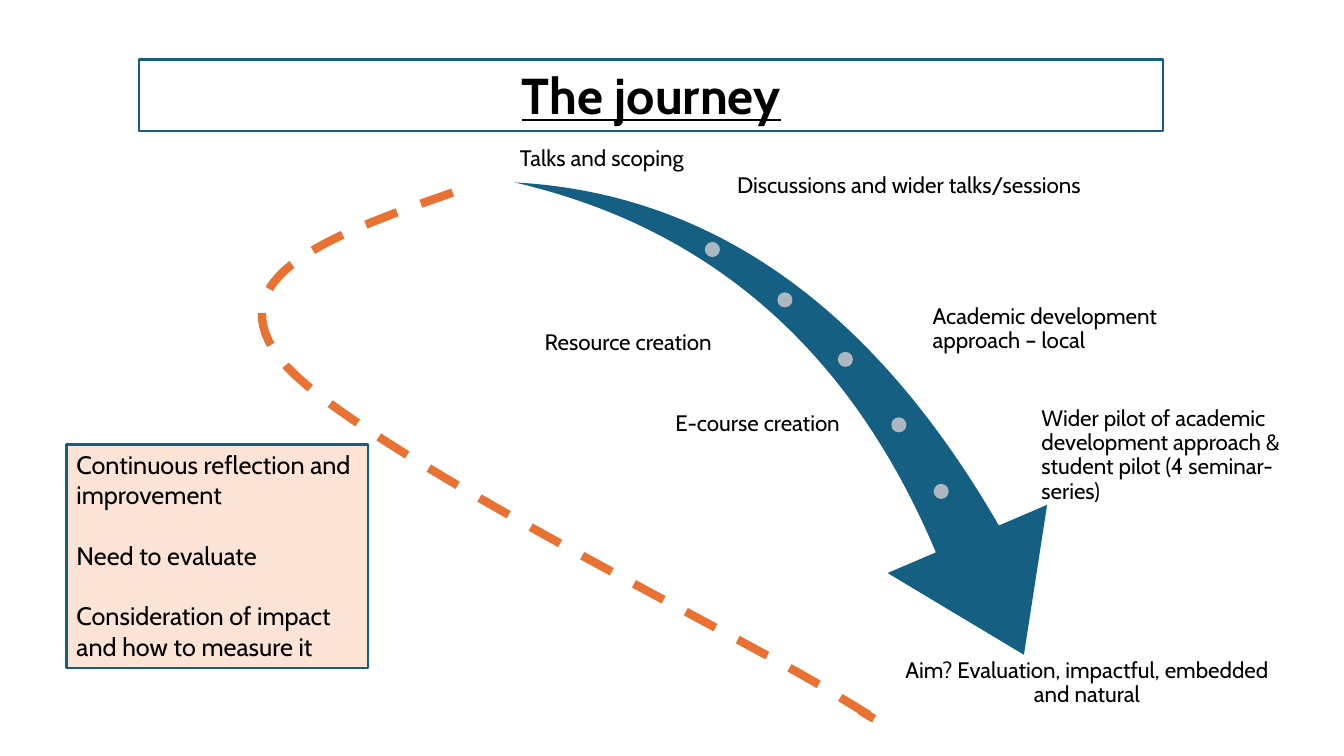
from pptx import Presentation
from pptx.dml.color import RGBColor
from pptx.enum.dml import MSO_LINE
from pptx.enum.shapes import MSO_SHAPE as Shape
from pptx.enum.text import MSO_ANCHOR as Anchor, MSO_AUTO_SIZE as AutoSize, PP_ALIGN as Align
from pptx.util import Inches, Pt

COLORS = {"blue": "156082", "dot": "ACB7C1", "orange": "E97132",
          "peach": "FBE3D6", "white": "FFFFFF", "black": "000000"}
FONT = "Cabin"

TITLE = "The journey"
REFLECTIONS = ["Continuous reflection and improvement",
               "Need to evaluate",
               "Consideration of impact and how to measure it"]
STEPS = [
    ("Talks and scoping", (4.57, 0.62, 2.8, 1.1), Align.CENTER, Anchor.BOTTOM),
    ("Discussions and wider talks/sessions", (7.29, 1.3, 4.24, 1.1), Align.LEFT, Anchor.MIDDLE),
    ("Resource creation", (4.58, 2.86, 2.5, 1.1), Align.RIGHT, Anchor.MIDDLE),
    ("Academic development approach – local", (9.23, 2.72, 2.95, 1.1), Align.LEFT, Anchor.MIDDLE),
    ("E-course creation", (4.57, 3.66, 3.78, 1.1), Align.RIGHT, Anchor.MIDDLE),
    ("Wider pilot of academic development approach & student pilot (4 seminar-series)",
     (10.31, 3.93, 2.44, 1.18), Align.LEFT, Anchor.MIDDLE),
    ("Aim? Evaluation, impactful, embedded and natural",
     (8.89, 6.52, 3.78, 0.63), Align.CENTER, Anchor.TOP),
]
MILESTONES = [(6.99, 2.4), (7.71, 2.9), (8.31, 3.49), (8.84, 4.14), (9.26, 4.8)]
MILESTONE_SIZE = 0.15
LOOP_START = (4.49, 1.91)
LOOP_CURVES = [
    ((3.32, 2.32), (2.15, 2.73), (2.77, 3.55)),
    ((3.38, 4.36), (7.21, 6.24), (8.17, 6.82)),
    ((9.14, 7.41), (8.47, 7), (8.55, 7.06)),
    ((8.63, 7.11), (8.65, 7.12), (8.67, 7.13)),
]
CURVE_STEPS = 30


def color(name):
    return RGBColor.from_string(COLORS[name])


def add_filled(slide, kind, place, fill, outline=None):
    shape = slide.shapes.add_shape(kind, *map(Inches, place))
    shape.shadow.inherit = False
    shape.fill.solid()
    shape.fill.fore_color.rgb = color(fill)
    if outline:
        shape.line.color.rgb = color(outline)
        shape.line.width = Pt(1.5)
    else:
        shape.line.fill.background()
    return shape


def write(shape, lines, size, align, anchor, gap=0, bold=None, underline=None):
    frame = shape.text_frame
    frame.word_wrap = True
    frame.vertical_anchor = anchor
    frame.text = "\n".join(lines)
    for index, paragraph in enumerate(frame.paragraphs):
        paragraph.alignment = align
        if index:
            paragraph.space_before = Pt(gap)
        font = paragraph.runs[0].font
        font.name, font.size = FONT, Pt(size)
        font.bold, font.underline = bold, underline
        font.color.rgb = color("black")
    return frame


def add_step(slide, text, place, align, anchor):
    box = slide.shapes.add_textbox(*map(Inches, place))
    frame = write(box, [text], 16, align, anchor)
    frame.margin_left = frame.margin_right = Inches(0.02)
    frame.margin_top = frame.margin_bottom = Inches(0.02)
    frame.paragraphs[0].line_spacing = 0.9


def curve_points(start, curves):
    for first, second, end in curves:
        for step in range(1, CURVE_STEPS + 1):
            t = step / CURVE_STEPS
            u = 1 - t
            yield tuple(Inches(u**3 * a + 3 * u * u * t * b + 3 * u * t * t * c + t**3 * d)
                        for a, b, c, d in zip(start, first, second, end))
        start = end


def add_loop(slide):
    builder = slide.shapes.build_freeform(*map(Inches, LOOP_START))
    builder.add_line_segments(list(curve_points(LOOP_START, LOOP_CURVES)), close=False)
    loop = builder.convert_to_shape()
    loop.shadow.inherit = False
    loop.fill.background()
    loop.line.color.rgb = color("orange")
    loop.line.width = Pt(6)
    loop.line.dash_style = MSO_LINE.DASH


def main():
    deck = Presentation()
    deck.slide_width, deck.slide_height = Inches(13.33), Inches(7.5)
    slide = deck.slides.add_slide(deck.slide_layouts[6])

    arrow = add_filled(slide, Shape.SWOOSH_ARROW, (4.97, 1.99, 5.94, 4.14), "blue")
    arrow.rotation = 73.3
    arrow.adjustments[0], arrow.adjustments[1] = 0.163, 0.314
    for left, top in MILESTONES:
        add_filled(slide, Shape.OVAL, (left, top, MILESTONE_SIZE, MILESTONE_SIZE), "dot")
    for step in STEPS:
        add_step(slide, *step)

    title = add_filled(slide, Shape.RECTANGLE, (1.38, 0.59, 10.16, 0.71), "white", "blue")
    write(title, [TITLE], 36, Align.CENTER, Anchor.TOP, bold=True, underline=True)
    add_loop(slide)
    reflection = add_filled(slide, Shape.RECTANGLE, (0.66, 4.41, 2.99, 2.22), "peach", "blue")
    write(reflection, REFLECTIONS, 18, Align.LEFT, Anchor.TOP, gap=21.6)
    for box in (title, reflection):
        box.text_frame.auto_size = AutoSize.SHAPE_TO_FIT_TEXT

    deck.save("out.pptx")


if __name__ == "__main__":
    main()
